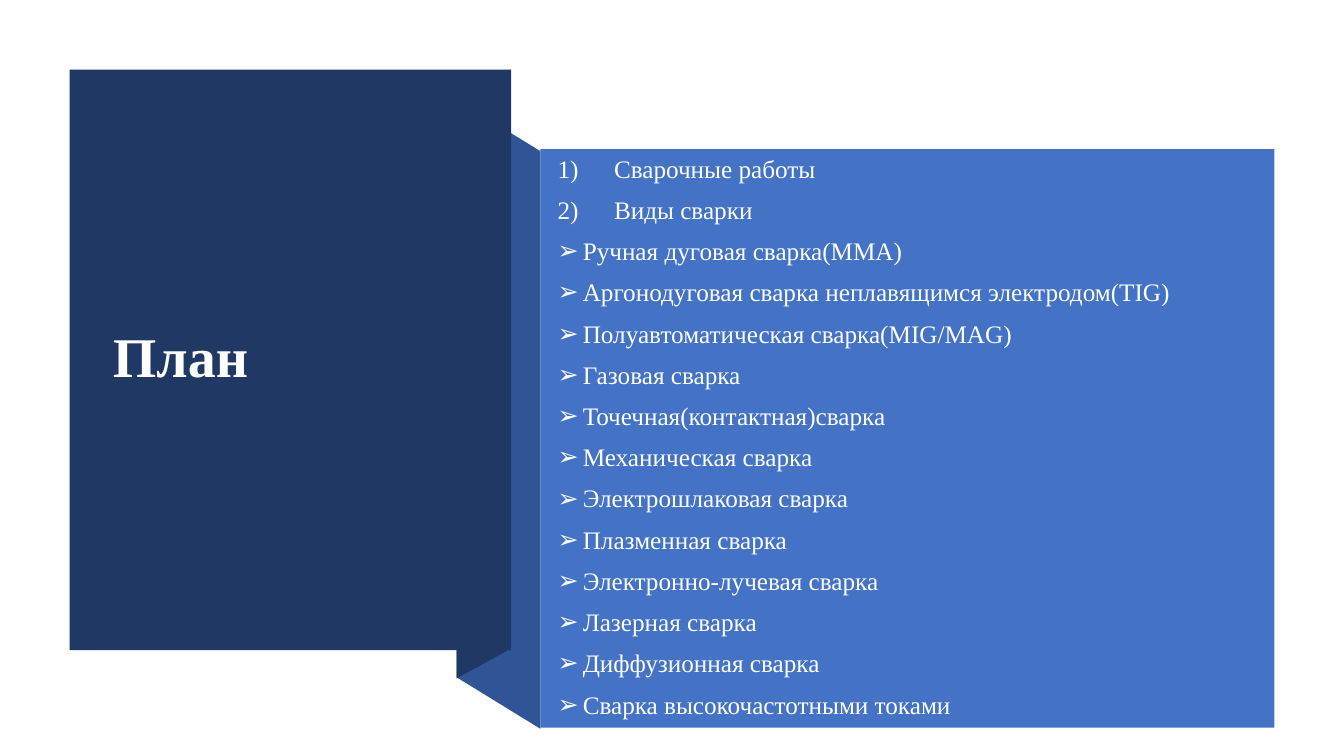
from lxml import etree
from pptx import Presentation
from pptx import util as u
from pptx.dml import color
from pptx.enum import shapes, text
from pptx.oxml import ns

PX = 9144
FONT = "Times New Roman"
NAVY, BLUE, SKY = "203864", "2F5597", "4472C4"

TOPICS = ["Сварочные работы", "Виды сварки"]
METHODS = [
    "Ручная дуговая сварка(MMA)",
    "Аргонодуговая сварка неплавящимся электродом(TIG)",
    "Полуавтоматическая сварка(MIG/MAG)",
    "Газовая сварка",
    "Точечная(контактная)сварка",
    "Механическая сварка",
    "Электрошлаковая сварка",
    "Плазменная сварка",
    "Электронно-лучевая сварка",
    "Лазерная сварка",
    "Диффузионная сварка",
    "Сварка высокочастотными токами",
]


def rgb(value):
    return color.RGBColor.from_string(value)


def paint(sp, fill):
    sp.shadow.inherit = False
    sp.fill.solid()
    sp.fill.fore_color.rgb = rgb(fill)
    sp.line.fill.background()


def add_polygon(s, points, fill):
    builder = s.shapes.build_freeform(*points[0], scale=PX)
    builder.add_line_segments(points[1:], close=True)
    paint(builder.convert_to_shape(), fill)


def add_panel(s, box, fill):
    sp = s.shapes.add_shape(shapes.MSO_SHAPE.RECTANGLE, *[v * PX for v in box])
    paint(sp, fill)


def place(s, sp, box):
    sp.left, sp.top, sp.width, sp.height = [v * PX for v in box]
    s.shapes._spTree.append(sp._element)
    tf = sp.text_frame
    tf.word_wrap = True
    tf.auto_size = text.MSO_AUTO_SIZE.NONE
    tf.vertical_anchor = text.MSO_ANCHOR.MIDDLE
    return tf


def format_paragraph(p, size, fill, bold=False):
    p.alignment = text.PP_ALIGN.LEFT
    p.line_spacing = 0.9
    for r in p.runs:
        r.font.name = FONT
        r.font.size = u.Pt(size)
        r.font.bold = bold
        r.font.color.rgb = rgb(fill)


def set_bullet(p, indent, font, tag, **attributes):
    pPr = p._p.get_or_add_pPr()
    pPr.set("marL", str(indent * PX))
    pPr.set("indent", str(-indent * PX))
    etree.SubElement(pPr, ns.qn("a:buFont"), typeface=font)
    etree.SubElement(pPr, ns.qn(tag), **attributes)


def add_title(s, box, title):
    tf = place(s, s.shapes.title, box)
    tf.text = title
    format_paragraph(tf.paragraphs[0], 40, "FFFFFF", bold=True)


def add_plan(s, box):
    tf = place(s, s.placeholders[1], box)
    tf.text = "\n".join(TOPICS + METHODS)
    for i, p in enumerate(tf.paragraphs):
        format_paragraph(p, 18, "FEFFFF")
        p.space_before = u.Pt(10)
        if i < len(TOPICS):
            set_bullet(p, 56, "+mj-lt", "a:buAutoNum", type="arabicParenR")
        else:
            set_bullet(p, 25, "Arial", "a:buChar", char="➢")


def main():
    prs = Presentation()
    prs.slide_width, prs.slide_height = 1333 * PX, 750 * PX
    s = prs.slides.add_slide(prs.slide_layouts[1])
    add_polygon(s, [(536, 723), (453, 672), (453, 99), (536, 150)], BLUE)
    add_polygon(s, [(506, 644), (453, 673), (453, 98), (506, 69)], NAVY)
    add_panel(s, (69, 69, 438, 576), NAVY)
    add_panel(s, (536, 148, 728, 574), SKY)
    add_title(s, (102, 107, 371, 499), "План")
    add_plan(s, (543, 143, 688, 583))
    prs.save("out.pptx")


if __name__ == "__main__":
    main()
